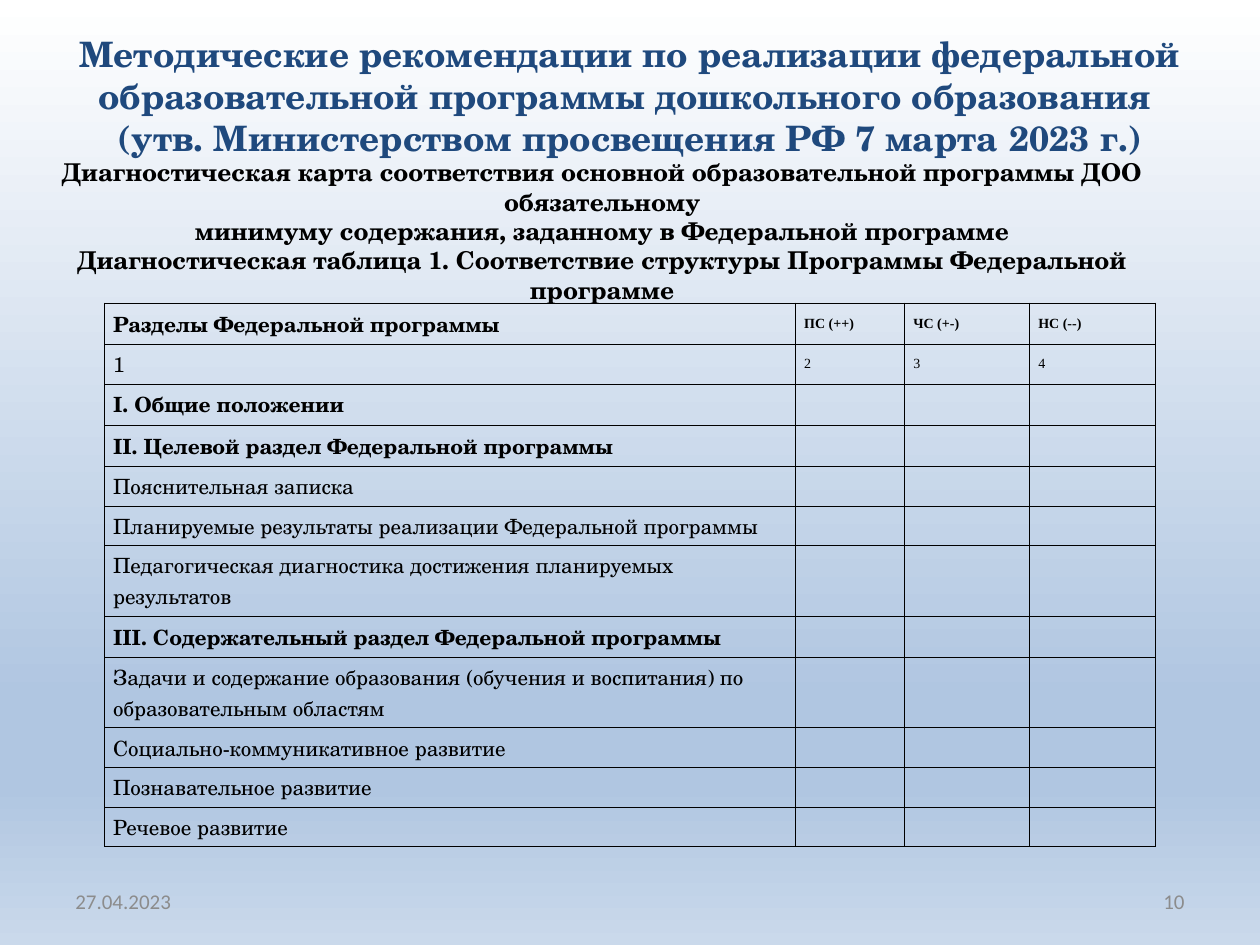
from dataclasses import dataclass

from lxml import etree
from pptx import Presentation
from pptx.dml.color import RGBColor
from pptx.enum.text import MSO_ANCHOR, PP_ALIGN
from pptx.oxml.ns import qn
from pptx.util import Cm, Pt

LEFT, CENTER, RIGHT = PP_ALIGN.LEFT, PP_ALIGN.CENTER, PP_ALIGN.RIGHT
TOP, MIDDLE = MSO_ANCHOR.TOP, MSO_ANCHOR.MIDDLE

COLORS = {
    "title": "1F497D",
    "text": "000000",
    "footer": "8C8C8C",
    "sky_top": "FFFFFF",
    "sky_middle": "B0C6E1",
    "sky_bottom": "CAD9EB",
}
GRADIENT = [(0, "sky_top"), (74, "sky_middle"), (83, "sky_middle"), (100, "sky_bottom")]

SERIF, TIMES, SANS = "TeX Gyre Schola", "Times New Roman", "Calibri"
COLUMN_WIDTHS = [13.93, 2.2, 2.52, 2.54]
PLAIN_HEIGHT, BOLD_HEIGHT, DOUBLE_HEIGHT = 0.8, 0.83, 1.42


@dataclass(frozen=True)
class Style:
    font: str
    size: float
    color: str = "text"
    bold: bool = False


@dataclass(frozen=True)
class TextBox:
    text: str
    left: float
    top: float
    width: float
    height: float
    style: Style
    align: PP_ALIGN = CENTER
    anchor: MSO_ANCHOR = TOP
    margin_vertical: float = 0


@dataclass(frozen=True)
class Row:
    section: str
    marks: tuple = ("", "", "")
    bold: bool = False
    height: float = PLAIN_HEIGHT


FOOTER = Style(SANS, 12, "footer")
TEXT_BOXES = [
    TextBox(
        "Методические рекомендации по реализации федеральной образовательной "
        "программы дошкольного образования \v"
        "(утв. Министерством просвещения РФ 7 марта 2023\u00a0г.)",
        1.27, 0.65, 22.86, 2.55, Style(SERIF, 20, "title", True),
    ),
    TextBox(
        "Диагностическая карта соответствия основной образовательной программы "
        "ДОО обязательному\v"
        "минимуму содержания, заданному в Федеральной программе\v"
        "Диагностическая таблица 1. Соответствие структуры Программы "
        "Федеральной программе",
        0, 3.17, 24.28, 2.95, Style(SERIF, 14, "text", True),
    ),
    TextBox("27.04.2023", 1.27, 17.65, 5.92, 1.02, FOOTER, LEFT, MIDDLE, 0.13),
    TextBox("10", 18.21, 17.65, 5.92, 1.02, FOOTER, RIGHT, MIDDLE, 0.13),
]

ROWS = [
    Row("Разделы Федеральной программы", ("ПС (++)", "ЧС (+-)", "НС (--)"), True, BOLD_HEIGHT),
    Row("1", ("2", "3", "4")),
    Row("I. Общие положении", bold=True, height=BOLD_HEIGHT),
    Row("II. Целевой раздел Федеральной программы", bold=True, height=BOLD_HEIGHT),
    Row("Пояснительная записка"),
    Row("Планируемые результаты реализации Федеральной программы"),
    Row("Педагогическая диагностика достижения планируемых результатов", height=DOUBLE_HEIGHT),
    Row("III. Содержательный раздел Федеральной программы", bold=True, height=BOLD_HEIGHT),
    Row(
        "Задачи и содержание образования (обучения и воспитания) по образовательным областям",
        height=DOUBLE_HEIGHT,
    ),
    Row("Социально-коммуникативное развитие"),
    Row("Познавательное развитие"),
    Row("Речевое развитие"),
]


def add_color(parent, color: str) -> None:
    etree.SubElement(parent, qn("a:srgbClr"), val=COLORS[color])


def paint_background(slide) -> None:
    slide.background.fill.gradient()
    gradient = slide.element.find(".//" + qn("a:gradFill"))
    for child in list(gradient):
        gradient.remove(child)
    stops = etree.SubElement(gradient, qn("a:gsLst"))
    for position, color in GRADIENT:
        add_color(etree.SubElement(stops, qn("a:gs"), pos=str(position * 1000)), color)
    etree.SubElement(gradient, qn("a:lin"), ang="5400000", scaled="0")


def format_runs(paragraph, style: Style) -> None:
    for run in paragraph.runs:
        run.font.name = style.font
        run.font.size = Pt(style.size)
        run.font.bold = style.bold
        run.font.color.rgb = RGBColor.from_string(COLORS[style.color])


def add_text_box(slide, box: TextBox) -> None:
    shape = slide.shapes.add_textbox(Cm(box.left), Cm(box.top), Cm(box.width), Cm(box.height))
    text_frame = shape.text_frame
    text_frame.word_wrap = True
    text_frame.vertical_anchor = box.anchor
    text_frame.margin_top = text_frame.margin_bottom = Cm(box.margin_vertical)
    paragraph = text_frame.paragraphs[0]
    paragraph.text = box.text
    paragraph.alignment = box.align
    format_runs(paragraph, box.style)


def add_borders(cell) -> None:
    properties = cell._tc.get_or_add_tcPr()
    for side in ("L", "R", "T", "B"):
        line = etree.SubElement(properties, qn(f"a:ln{side}"), w=str(Pt(0.5)))
        add_color(etree.SubElement(line, qn("a:solidFill")), "text")


def fill_cell(cell, text: str, style: Style) -> None:
    add_borders(cell)
    cell.fill.background()
    cell.vertical_anchor = MIDDLE
    cell.margin_left = cell.margin_right = Cm(0.17)
    # Empty cells keep no vertical margin, so they never stretch their row
    cell.margin_top = cell.margin_bottom = Cm(0.08 if text else 0)
    if text:
        paragraph = cell.text_frame.paragraphs[0]
        paragraph.text = text
        format_runs(paragraph, style)


def add_program_table(slide) -> None:
    height = sum(row.height for row in ROWS)
    frame = slide.shapes.add_table(
        len(ROWS), len(COLUMN_WIDTHS), Cm(2.11), Cm(6.11), Cm(sum(COLUMN_WIDTHS)), Cm(height)
    )
    table = frame.table
    table.first_row = table.horz_banding = False
    for column, width in zip(table.columns, COLUMN_WIDTHS):
        column.width = Cm(width)
    for row_index, row in enumerate(ROWS):
        table.rows[row_index].height = Cm(row.height)
        fill_cell(table.cell(row_index, 0), row.section, Style(SERIF, 12, bold=row.bold))
        for column_index, mark in enumerate(row.marks, start=1):
            fill_cell(table.cell(row_index, column_index), mark, Style(TIMES, 8, bold=row.bold))


def main() -> None:
    presentation = Presentation()
    presentation.slide_width, presentation.slide_height = Cm(25.4), Cm(19.05)
    slide = presentation.slides.add_slide(presentation.slide_layouts[6])
    paint_background(slide)
    # Headings and footer
    for box in TEXT_BOXES:
        add_text_box(slide, box)
    # Comparison of programme sections
    add_program_table(slide)
    presentation.save("out.pptx")


if __name__ == "__main__":
    main()
